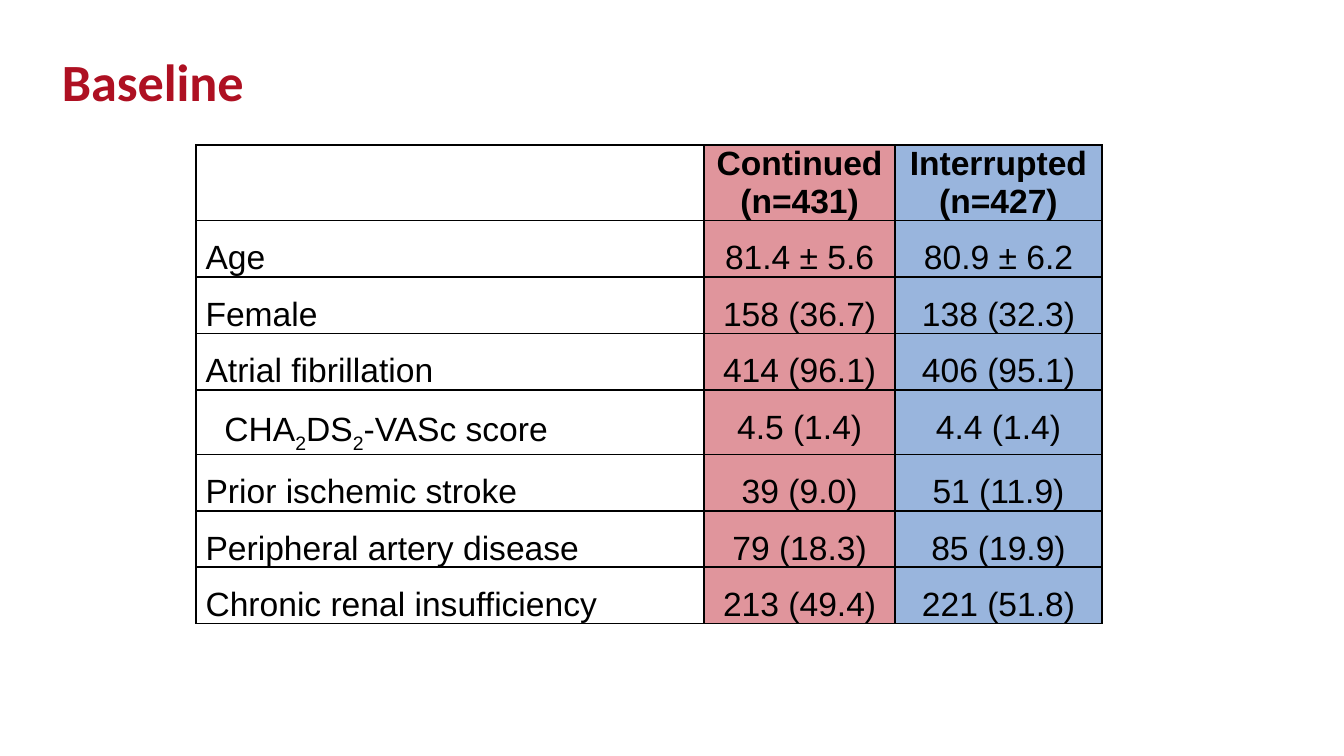
from dataclasses import dataclass

import lxml.etree
import pptx
import pptx.dml.color
import pptx.enum.text
import pptx.oxml.ns
import pptx.presentation
import pptx.slide
import pptx.table
import pptx.text.text
import pptx.util
from pptx.util import Inches

Color = pptx.dml.color.RGBColor
Align = pptx.enum.text.PP_ALIGN
Anchor = pptx.enum.text.MSO_ANCHOR


@dataclass(frozen=True)
class Theme:
    title_font: str = "Calibri"
    table_font: str = "Arial"
    title_size: int = 28
    table_size: int = 18
    border_width: int = 1
    title_color: Color = Color(0xAE, 0x10, 0x22)
    text_color: Color = Color(0, 0, 0)
    column_fills: tuple[Color, ...] = (
        Color(0xFF, 0xFF, 0xFF),
        Color(0xE0, 0x95, 0x9C),
        Color(0x99, 0xB5, 0xDD),
    )


@dataclass(frozen=True)
class Row:
    label: str  # pieces between underscores are subscripts
    continued: str
    interrupted: str
    height: float = 0.42
    indent: float = 0
    is_header: bool = False


THEME = Theme()
COLUMN_WIDTHS = (3.78, 1.42, 1.54)
ROWS = (
    Row("", "Continued\v(n=431)", "Interrupted\n(n=427)", height=0.56, is_header=True),
    Row("Age", "81.4 ± 5.6", "80.9 ± 6.2"),
    Row("Female", "158 (36.7)", "138 (32.3)"),
    Row("Atrial fibrillation", "414 (96.1)", "406 (95.1)"),
    Row("CHA_2_DS_2_-VASc score", "4.5 (1.4)", "4.4 (1.4)", height=0.48, indent=0.14),
    Row("Prior ischemic stroke", "39 (9.0)", "51 (11.9)"),
    Row("Peripheral artery disease", "79 (18.3)", "85 (19.9)"),
    Row("Chronic renal insufficiency", "213 (49.4)", "221 (51.8)"),
)


def style_font(font: pptx.text.text.Font, name: str, size: int, color: Color, bold: bool) -> None:
    font.name = name
    font.size = pptx.util.Pt(size)
    font.bold = bold
    font.color.rgb = color


def add_borders(cell: pptx.table._Cell) -> None:
    properties = cell._tc.get_or_add_tcPr()
    for side in ("lnL", "lnR", "lnT", "lnB"):
        line = lxml.etree.SubElement(properties, pptx.oxml.ns.qn(f"a:{side}"))
        line.set("w", str(pptx.util.Pt(THEME.border_width)))
        fill = lxml.etree.SubElement(line, pptx.oxml.ns.qn("a:solidFill"))
        color = lxml.etree.SubElement(fill, pptx.oxml.ns.qn("a:srgbClr"))
        color.set("val", str(THEME.text_color))


def write_label(paragraph: pptx.text.text._Paragraph, row: Row) -> None:
    for index, piece in enumerate(row.label.split("_")):
        if piece:
            run = paragraph.add_run()
            run.text = piece
            if index % 2:
                run.font._element.set("baseline", "-25000")
    if row.indent:
        paragraph._p.get_or_add_pPr().set("marL", str(Inches(row.indent)))


def fill_cell(cell: pptx.table._Cell, row: Row, column: int) -> None:
    cell.margin_left = cell.margin_right = Inches(0.07)
    cell.margin_top = cell.margin_bottom = 0
    add_borders(cell)
    cell.fill.solid()
    cell.fill.fore_color.rgb = THEME.column_fills[column]
    if column == 0:
        write_label(cell.text_frame.paragraphs[0], row)
    else:
        cell.text = (row.continued, row.interrupted)[column - 1]
    for paragraph in cell.text_frame.paragraphs:
        paragraph.alignment = Align.CENTER if column else Align.LEFT
        paragraph.line_spacing = 1.0 if row.is_header else 1.5
        style_font(paragraph.font, THEME.table_font, THEME.table_size,
                   THEME.text_color, row.is_header)


def add_title(slide: pptx.slide.Slide, text: str) -> None:
    title = slide.shapes.title
    title.left, title.top = Inches(0.36), Inches(0.37)
    title.width, title.height = Inches(8.35), Inches(0.47)
    frame = title.text_frame
    frame.text = text
    frame.auto_size = pptx.enum.text.MSO_AUTO_SIZE.NONE
    frame.vertical_anchor = Anchor.TOP
    paragraph = frame.paragraphs[0]
    paragraph.alignment = Align.LEFT
    paragraph.line_spacing = 0.89
    style_font(paragraph.font, THEME.title_font, THEME.title_size, THEME.title_color, True)


def add_baseline_table(slide: pptx.slide.Slide) -> None:
    frame = slide.shapes.add_table(
        len(ROWS), len(COLUMN_WIDTHS), Inches(1.46), Inches(1.08),
        Inches(sum(COLUMN_WIDTHS)), Inches(sum(row.height for row in ROWS)))
    table = frame.table
    table.first_row = table.horz_banding = False
    for column, width in zip(table.columns, COLUMN_WIDTHS):
        column.width = Inches(width)
    for row_index, row in enumerate(ROWS):
        table.rows[row_index].height = Inches(row.height)
        for column_index in range(len(COLUMN_WIDTHS)):
            fill_cell(table.cell(row_index, column_index), row, column_index)


def main() -> None:
    presentation = pptx.Presentation()
    # Widescreen, 16:9
    presentation.slide_width = Inches(10)
    presentation.slide_height = Inches(10 * 9 / 16)
    # Title-only layout
    slide = presentation.slides.add_slide(presentation.slide_layouts[5])
    add_title(slide, "Baseline")
    add_baseline_table(slide)
    presentation.save("out.pptx")


if __name__ == "__main__":
    main()
